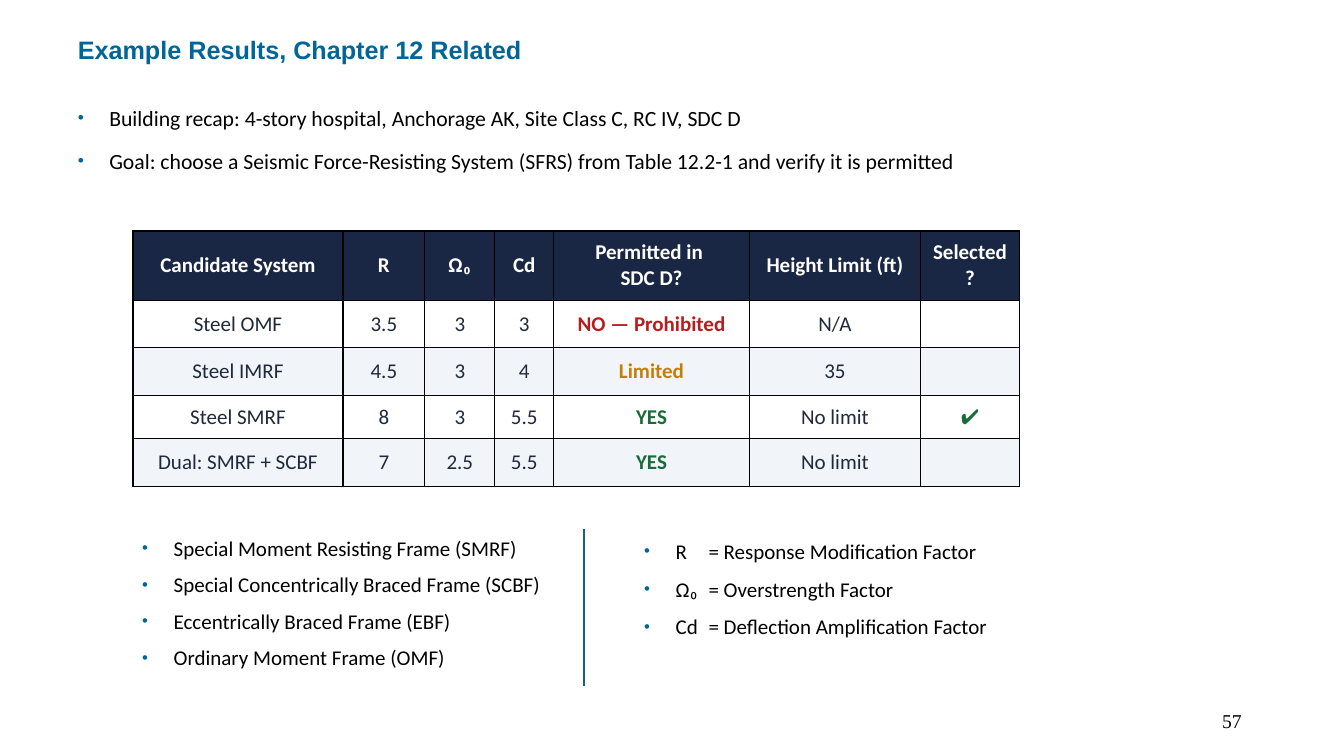
from lxml import etree
from pptx import Presentation
from pptx.dml.color import RGBColor
from pptx.enum import shapes, text
from pptx.oxml import ns
from pptx.util import Pt

BLUE, NAVY, INK = "006699", "1A2744", "1E293B"
WHITE, PALE, BLACK = "FFFFFF", "F1F5F9", "000000"
GREEN = "1A6B3A"
MARKS = {"NO — Prohibited": "B91C1C", "Limited": "C47E0A",
         "YES": GREEN, "✔": GREEN}

RECAP = [
    "Building recap: 4-story hospital, Anchorage AK, Site Class C, RC IV, SDC D",
    "Goal: choose a Seismic Force-Resisting System (SFRS) from Table 12.2-1 "
    "and verify it is permitted",
]
FRAMES = [
    "Special Moment Resisting Frame (SMRF)",
    "Special Concentrically Braced Frame (SCBF)",
    "Eccentrically Braced Frame (EBF)",
    "Ordinary Moment Frame (OMF)",
]
FACTORS = [
    "R\t= Response Modification Factor",
    "Ω₀\t= Overstrength Factor",
    "Cd\t= Deflection Amplification Factor",
]
SYSTEMS = [
    ["Candidate System", "R", "Ω₀", "Cd", "Permitted in \vSDC D?",
     "Height Limit (ft)", "Selected?"],
    ["Steel OMF", "3.5", "3", "3", "NO — Prohibited", "N/A", ""],
    ["Steel IMRF", "4.5", "3", "4", "Limited", "35", ""],
    ["Steel SMRF", "8", "3", "5.5", "YES", "No limit", "✔"],
    ["Dual: SMRF + SCBF", "7", "2.5", "5.5", "YES", "No limit", ""],
]
WIDTHS = [150, 58.5, 50, 42, 140, 122, 71]
HEIGHTS = [49.5, 34, 34, 31, 34]


def color(code):
    return RGBColor.from_string(code)


def add(node, tag, **attrs):
    return etree.SubElement(node, ns.qn("a:" + tag), attrs)


def write(para, words, size=15, face="Calibri", ink=BLACK, bold=False,
          align=None):
    para.text = words
    para.alignment = align
    for run in para.runs:
        font = run.font
        font.size, font.name, font.bold = Pt(size), face, bold
        font.color.rgb = color(ink)
    for gap in para._p.findall(ns.qn("a:br")):
        add(gap, "rPr", sz=str(int(size * 100)))


def box(slide, left, top, width, height, wrap=True):
    frame = slide.shapes.add_textbox(
        Pt(left), Pt(top), Pt(width), Pt(height)).text_frame
    frame.word_wrap = wrap
    return frame


def bullet(para, tab=None):
    props = para._p.get_or_add_pPr()
    props.set("marL", str(Pt(22.5)))
    props.set("indent", str(Pt(-22.5)))
    add(add(props, "buClr"), "srgbClr", val=BLUE)
    add(props, "buSzPct", val="80000")
    add(props, "buFont", typeface="Arial")
    add(props, "buChar", char="•")
    if tab:
        add(add(props, "tabLst"), "tab", pos=str(Pt(tab)), algn="l")


def listing(slide, items, place, before, after, size=15, tab=None):
    frame = box(slide, *place)
    for i, item in enumerate(items):
        para = frame.add_paragraph() if i else frame.paragraphs[0]
        bullet(para, tab)
        para.space_before = Pt(before if i else 0)
        para.space_after = Pt(after)
        write(para, item, size=size)


def border(cell):
    props = cell._tc.get_or_add_tcPr()
    for side in "LRTB":
        line = add(props, "ln" + side, w=str(Pt(1)))
        add(add(line, "solidFill"), "srgbClr", val=BLACK)


def grid(slide, left, top):
    table = slide.shapes.add_table(
        len(HEIGHTS), len(WIDTHS), Pt(left), Pt(top),
        Pt(sum(WIDTHS)), Pt(sum(HEIGHTS))).table
    for col, width in zip(table.columns, WIDTHS):
        col.width = Pt(width)
    for r, row in enumerate(SYSTEMS):
        table.rows[r].height = Pt(HEIGHTS[r])
        for c, words in enumerate(row):
            cell = table.cell(r, c)
            border(cell)
            cell.fill.solid()
            back = NAVY if r == 0 else WHITE if r % 2 else PALE
            cell.fill.fore_color.rgb = color(back)
            cell.margin_top = cell.margin_bottom = Pt(5)
            cell.vertical_anchor = text.MSO_ANCHOR.MIDDLE
            ink = WHITE if r == 0 else MARKS.get(words, INK)
            write(cell.text_frame.paragraphs[0], words, ink=ink,
                  bold=ink != INK, align=text.PP_ALIGN.CENTER)


def divider(slide, x, top, end):
    line = slide.shapes.add_connector(
        shapes.MSO_CONNECTOR.STRAIGHT, Pt(x), Pt(top), Pt(x), Pt(end))
    line.line.color.rgb = color("156082")
    line.line.width = Pt(1.5)
    add(line._element.spPr, "effectLst")


def main():
    deck = Presentation()
    deck.slide_width, deck.slide_height = Pt(960), Pt(540)
    slide = deck.slides.add_slide(deck.slide_layouts[6])

    number = box(slide, 678, 500.5, 216, 29)
    number.vertical_anchor = text.MSO_ANCHOR.MIDDLE
    write(number.paragraphs[0], "57", size=14, face="Times New Roman",
          ink="010000", align=text.PP_ALIGN.RIGHT)
    title = box(slide, 48.5, 21, 335, 29, wrap=False)
    write(title.paragraphs[0], "Example Results, Chapter 12 Related",
          size=18, face="Arial", ink=BLUE, bold=True)

    listing(slide, RECAP, (48.5, 71.5, 738, 86), 6, 6, size=15.5)
    grid(slide, 95, 165)
    listing(slide, FRAMES, (94.5, 379, 307, 104), 4, 4)
    divider(slide, 417, 378, 490)
    listing(slide, FACTORS, (453, 381, 306, 106), 4, 5, tab=46)
    deck.save("out.pptx")


if __name__ == "__main__":
    main()
